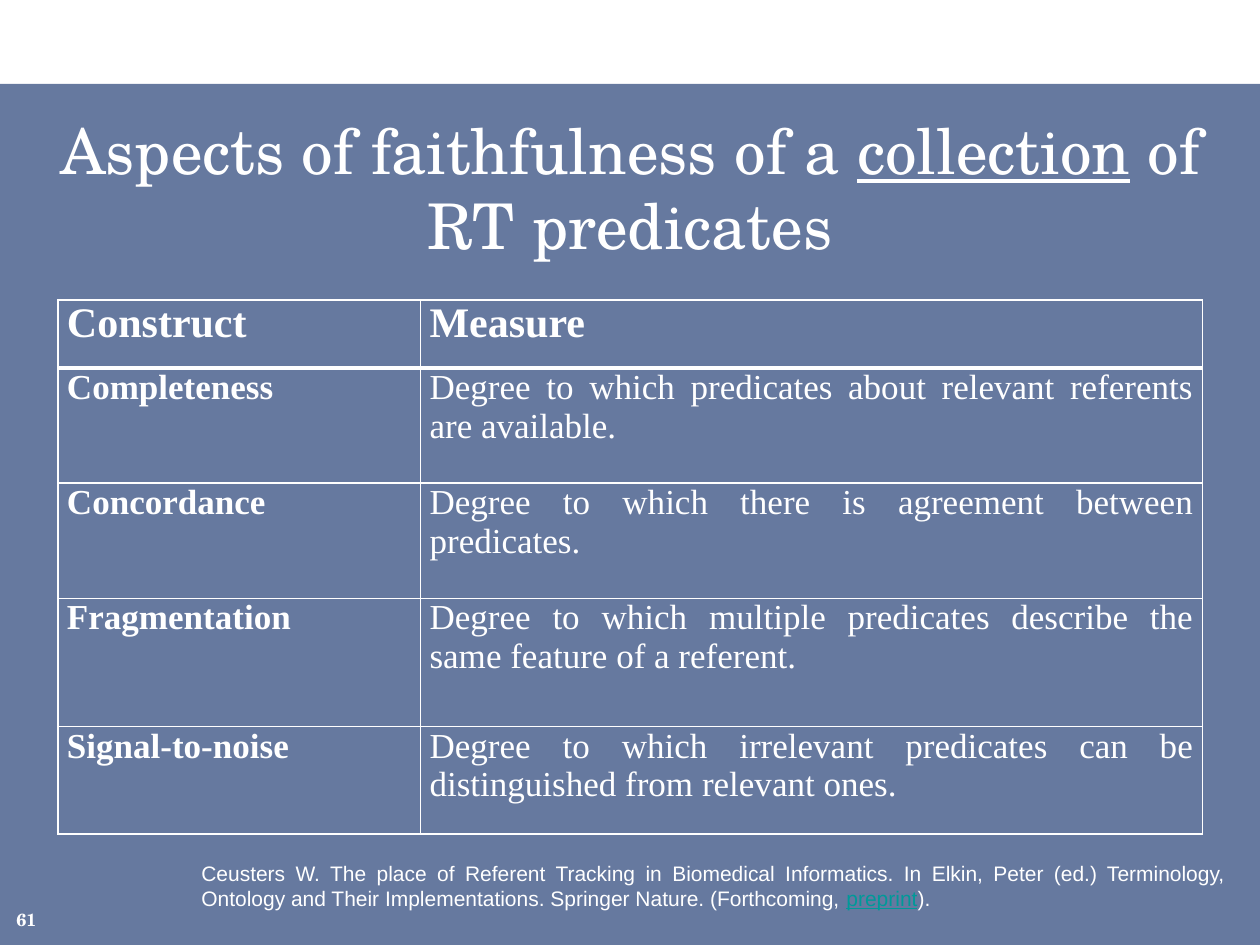
from pptx import Presentation
from pptx.dml.color import RGBColor
from pptx.enum.shapes import MSO_SHAPE
from pptx.enum.text import MSO_ANCHOR, PP_ALIGN
from pptx.oxml import parse_xml
from pptx.oxml.ns import nsdecls
from pptx.util import Cm, Pt
from lxml.etree import SubElement


def color(value):
    return RGBColor.from_string(value)


def add_run(para, text, font, size, bold=False, underline=False, fill="FFFFFF"):
    span = para.add_run()
    span.text = text
    span.font.name = font
    span.font.size = Pt(size)
    span.font.bold = bold
    span.font.underline = underline
    span.font.color.rgb = color(fill)


SCHOLA = "TeX Gyre Schola"
SERIF = "Times New Roman"

deck = Presentation()
deck.slide_width = Cm(25.4)
deck.slide_height = Cm(19.05)
page = deck.slides.add_slide(deck.slide_layouts[6])

panel = page.shapes.add_shape(MSO_SHAPE.RECTANGLE, 0, Cm(1.69), Cm(25.4), Cm(17.36))
panel.shadow.inherit = False
panel.fill.solid()
panel.fill.fore_color.rgb = color("002060")
panel_color = panel.fill._xPr.solidFill[0]
SubElement(panel_color, panel_color.tag.replace("srgbClr", "alpha"), val="60000")
panel.line.fill.background()

texts = [
    (0.08, 18.21, 0.99, 0.64, PP_ALIGN.LEFT, SCHOLA, 10, True, [("61", False, "FFFFFF")]),
    (0.64, 2.12, 24.13, 2.12, PP_ALIGN.CENTER, SCHOLA, 36, False, [
        ("Aspects of faithfulness of a ", False, "FFFFFF"),
        ("collection", True, "FFFFFF"),
        (" of RT predicates", False, "FFFFFF"),
    ]),
    (3.81, 17.22, 21.16, 1.27, PP_ALIGN.JUSTIFY, "Arial", 12, False, [
        ("Ceusters W. The place of Referent Tracking in Biomedical Informatics. "
         "In Elkin, Peter (ed.) Terminology, Ontology and Their Implementations. "
         "Springer Nature. (Forthcoming, ", False, "FFFFFF"),
        ("preprint", True, "009999"),
        (").", False, "FFFFFF"),
    ]),
]
for left, top, width, height, align, font, size, bold, spans in texts:
    box = page.shapes.add_textbox(Cm(left), Cm(top), Cm(width), Cm(height))
    box.text_frame.word_wrap = True
    para = box.text_frame.paragraphs[0]
    para.alignment = align
    for text, underline, fill in spans:
        add_run(para, text, font, size, bold, underline, fill)

rows = [
    ("Construct", "Measure", 1.37),
    ("Completeness", "Degree to which predicates about relevant referents are available.", 2.32),
    ("Concordance", "Degree to which there is agreement between predicates.", 2.32),
    ("Fragmentation", "Degree to which multiple predicates describe the same feature of a referent.", 2.59),
    ("Signal-to-noise", "Degree to which irrelevant predicates can be distinguished from relevant ones.", 2.16),
]
frame = page.shapes.add_table(len(rows), 2, Cm(1.17), Cm(6.05), Cm(23.07), Cm(10.76))
table = frame.table
table.columns[0].width = Cm(7.31)
table.columns[1].width = Cm(15.76)

for row_index, (construct, measure, height) in enumerate(rows):
    table.rows[row_index].height = Cm(height)
    header = row_index == 0
    for column_index, text in enumerate((construct, measure)):
        cell = table.cell(row_index, column_index)
        cell.margin_left = cell.margin_right = Cm(0.18)
        cell.margin_top = cell.margin_bottom = 0
        cell.vertical_anchor = MSO_ANCHOR.TOP
        para = cell.text_frame.paragraphs[0]
        para.alignment = PP_ALIGN.JUSTIFY
        add_run(para, text, SERIF, 24 if header else 20, header or column_index == 0)
        properties = cell._tc.get_or_add_tcPr()
        for side in "LRTB":
            thick = (row_index, side) in ((0, "B"), (1, "T"))
            properties.append(parse_xml(
                f'<a:ln{side} {nsdecls("a")} w="{Pt(3 if thick else 1)}"><a:solidFill>'
                f'<a:srgbClr val="FFFFFF"/></a:solidFill></a:ln{side}>'))
        cell.fill.background()

deck.save("out.pptx")
